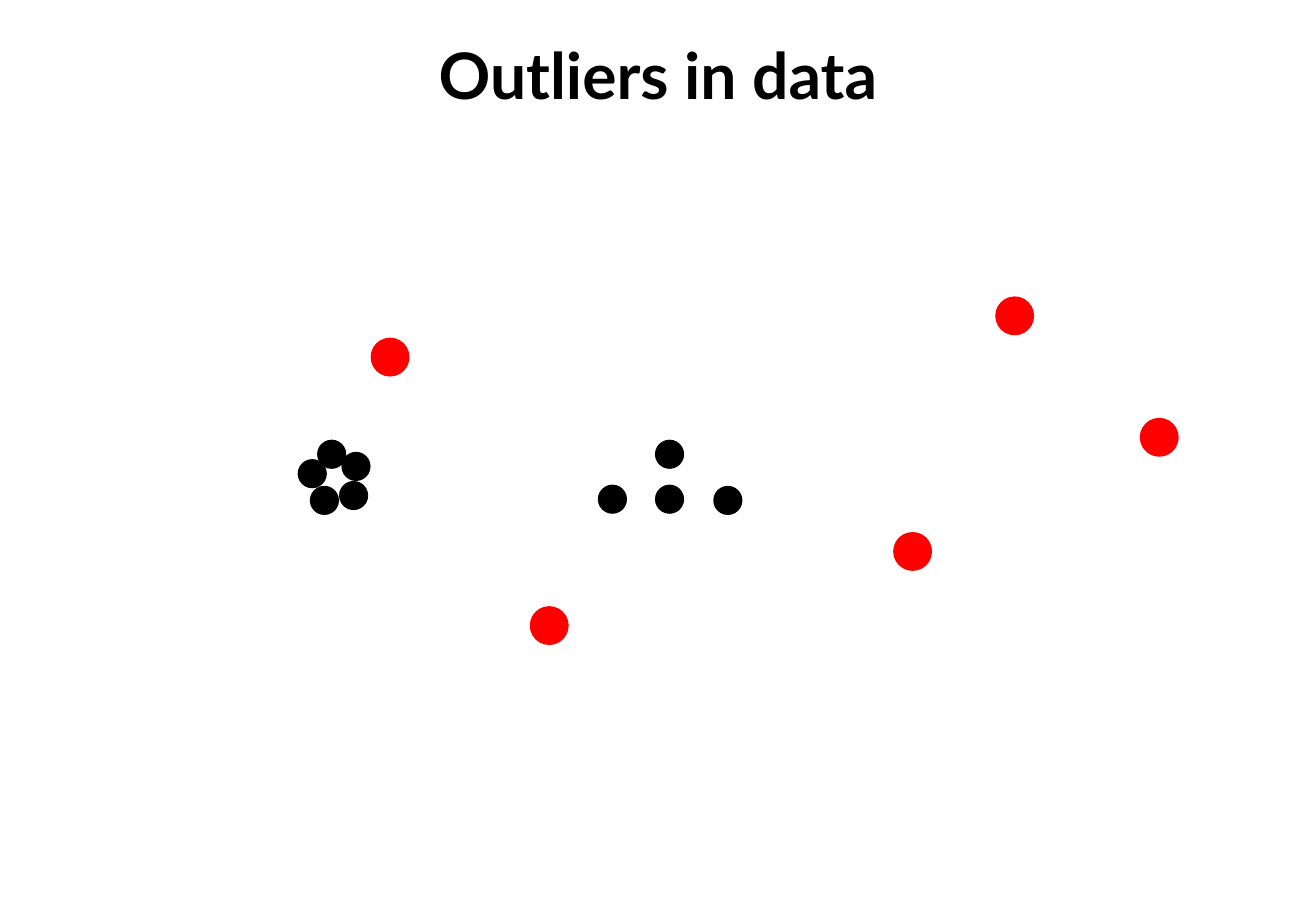
from pptx import Presentation
from pptx.dml.color import RGBColor
from pptx.enum.shapes import MSO_SHAPE
from pptx.enum.text import MSO_ANCHOR, PP_ALIGN
from pptx.util import Inches, Pt

OVAL = MSO_SHAPE.OVAL
MIDDLE = MSO_ANCHOR.MIDDLE
CENTER = PP_ALIGN.CENTER
BLACK = RGBColor(0x00, 0x00, 0x00)
RED = RGBColor(0xFF, 0x00, 0x00)

COLUMNS, ROWS = 108.3, 75
TITLE_ONLY = 5

TIGHT_CLUSTER = [(28.1, 37.2), (26.1, 36.2), (24.5, 37.8), (25.5, 40), (27.9, 39.6)]
LOOSE_CLUSTER = [(53.9, 39.9), (49.2, 39.9), (58.7, 40), (53.9, 36.2)]
OUTLIERS = [(43.6, 49.9), (30.5, 27.8), (73.5, 43.8), (81.9, 24.4), (93.8, 34.4)]


class SlideBuilder:
    title_format = {"name": "Lato", "size": Pt(38), "bold": True}
    title_frame_format = {"vertical_anchor": MIDDLE, "word_wrap": True}

    def __init__(self, presentation):
        self.cell_width = presentation.slide_width / COLUMNS
        self.cell_height = presentation.slide_height / ROWS
        self.slide = presentation.slides.add_slide(presentation.slide_layouts[TITLE_ONLY])

    def box(self, column, row, columns, rows):
        return [
            round(column * self.cell_width),
            round(row * self.cell_height),
            round(columns * self.cell_width),
            round(rows * self.cell_height),
        ]

    def apply(self, target, values):
        for name, value in values.items():
            setattr(target, name, value)

    def title(self, text, *cells):
        shape = self.slide.shapes.title
        self.apply(shape, dict(zip(("left", "top", "width", "height"), self.box(*cells))))
        self.apply(shape.text_frame, self.title_frame_format)
        paragraph = shape.text_frame.paragraphs[0]
        paragraph.alignment = CENTER
        run = paragraph.add_run()
        run.text = text
        self.apply(run.font, self.title_format)
        run.font.color.rgb = BLACK

    def points(self, positions, size, color):
        for column, row in positions:
            shape = self.slide.shapes.add_shape(OVAL, *self.box(column, row, size, size))
            shape.shadow.inherit = False
            shape.fill.solid()
            shape.fill.fore_color.rgb = color
            shape.line.fill.background()


def main():
    presentation = Presentation()
    presentation.slide_width = Inches(10.83)
    presentation.slide_height = Inches(7.5)
    builder = SlideBuilder(presentation)
    builder.title("Outliers in data", 1.8, 2.1, 104.7, 7.9)
    builder.points(TIGHT_CLUSTER + LOOSE_CLUSTER, 2.4, BLACK)
    builder.points(OUTLIERS, 3.2, RED)
    presentation.save("out.pptx")


if __name__ == "__main__":
    main()
